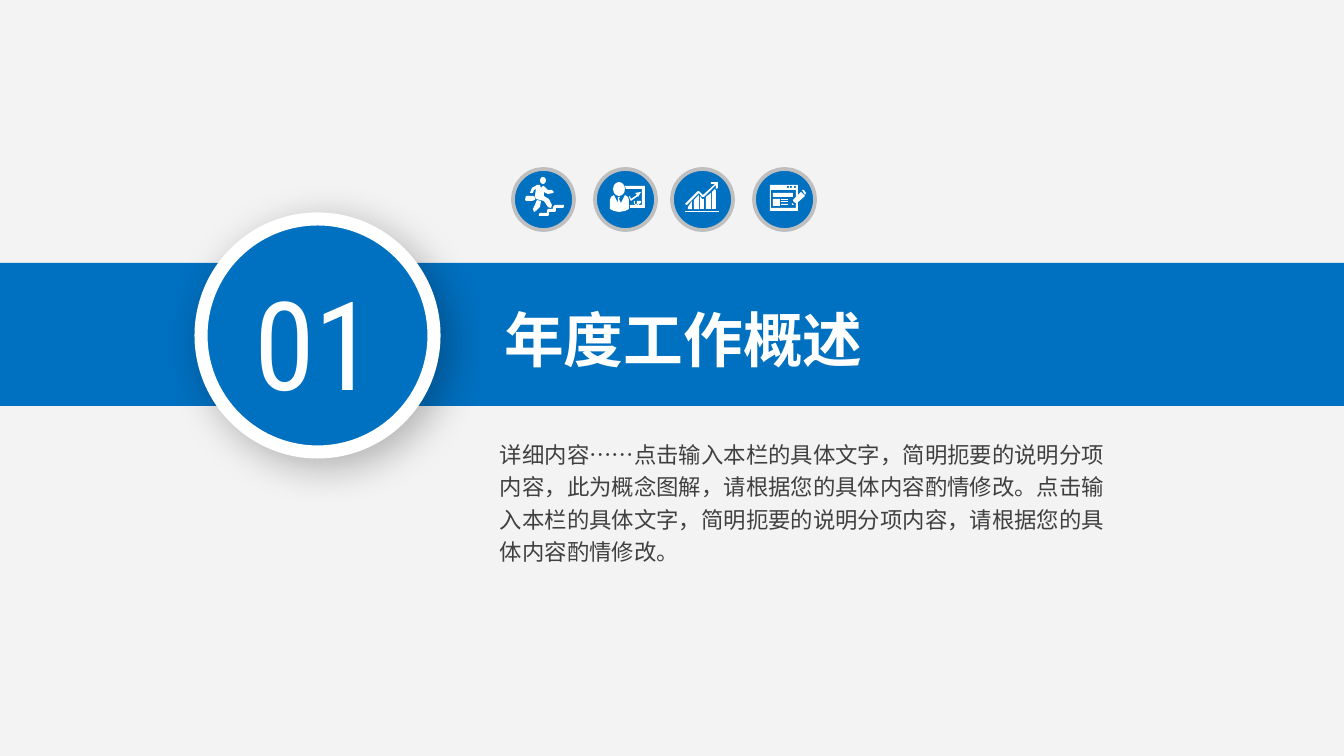
from lxml import etree
from pptx import Presentation
from pptx.dml.color import RGBColor
from pptx.enum.shapes import MSO_SHAPE
from pptx.enum.text import MSO_AUTO_SIZE, PP_ALIGN
from pptx.oxml.ns import qn
from pptx.util import Pt

OVAL, RECT = MSO_SHAPE.OVAL, MSO_SHAPE.RECTANGLE
FIT, CENTER = MSO_AUTO_SIZE.SHAPE_TO_FIT_TEXT, PP_ALIGN.CENTER
SCALE = 914400 / 134.4
COLORS = {"bg": "F3F3F3", "blue": "0070C0", "white": "FFFFFF",
          "ring": "BFBFBF", "body": "404040"}
CJK, LATIN = "Noto Sans CJK SC", "Roboto Condensed"
ICON_TOP, ICON_SIZE = 169, 61

# Icon parts lie in px from the top left of their disc:
# ovals and rects are boxes, outlines are lists of contours.
RUNNER = {
    "ovals": [(27, 8, 6, 7)],
    "outlines": [
        [[(27, 44), (34, 44), (34, 42), (35, 40), (40, 40), (40, 38), (42, 36),
          (51, 36), (51, 38), (50, 39), (43, 39), (43, 42), (42, 43), (36, 43),
          (36, 46), (35, 47), (26, 47), (26, 45)]],
        [[(13, 32), (19, 32), (22, 31), (22, 28), (20, 27), (13, 27), (12, 31)]],
        [[(20, 40), (24, 31), (28, 32), (27, 38), (23, 42), (21, 43)]],
        [[(30, 17), (31, 17), (35, 21), (39, 21), (41, 23), (40, 24), (35, 25),
          (31, 23), (31, 27), (36, 30), (39, 36), (38, 39), (35, 38), (31, 32),
          (23, 30), (22, 27), (23, 20), (21, 21), (20, 24), (17, 24), (19, 19),
          (24, 16), (27, 16), (28, 19)]],
    ],
}
PRESENTER = {
    "ovals": [(18, 13, 12, 14)],
    "outlines": [
        [[(30, 17), (31, 20), (47, 20), (47, 36), (35, 36), (35, 39), (50, 39),
          (50, 17)]],
        [[(35, 27), (34, 28), (36, 32), (43, 27), (43, 28), (46, 23), (40, 24),
          (42, 26), (36, 30)]],
        [[(30, 26), (26, 34), (24, 30), (25, 28), (23, 28), (23, 34), (19, 26),
          (16, 28), (15, 31), (15, 40), (19, 42), (24, 43), (30, 42), (34, 40),
          (34, 31), (33, 28)]],
        [[(39, 32), (39, 35), (41, 36), (43, 35), (43, 32), (42, 32), (42, 35),
          (40, 35), (40, 32)]],
        [[(43, 32), (43, 36), (44, 36), (44, 35), (46, 34), (46, 32)]],
    ],
}
GROWTH = {
    "rects": [(13, 42, 34, 1)],
    "outlines": [
        [[(16, 40), (20, 40), (20, 32), (16, 38)]],
        [[(22, 40), (27, 40), (27, 26), (22, 31)]],
        [[(28, 40), (32, 40), (32, 30), (30, 30), (28, 27)]],
        [[(34, 40), (39, 40), (39, 24), (34, 28)]],
        [[(40, 40), (44, 40), (44, 22), (43, 20), (40, 23)]],
        [[(15, 36), (27, 24), (30, 28), (32, 28), (44, 16), (44, 20), (46, 19),
          (46, 13), (39, 13), (39, 15), (43, 15), (31, 26), (27, 22), (26, 22),
          (13, 35)]],
    ],
}
BROWSER = {
    "rects": [(19, 24, 20, 4), (19, 30, 7, 7)]
             + [(27, y, 7, 1) for y in (30, 32, 35)],
    "outlines": [
        [[(16, 16), (44, 16), (44, 42), (16, 42)],
         [(17, 21), (17, 39), (42, 39), (42, 21)]]
        + [[(x, 17), (x, 19), (x + 2, 19), (x + 2, 17)] for x in (33, 36, 40)],
        [[(38, 34), (38, 36), (40, 36)]],
        [[(51, 26), (52, 24), (50, 21), (48, 21)]],
        [[(47, 23), (39, 31), (39, 32), (41, 34), (43, 34), (51, 27)]],
    ],
}
ICONS = [(513, RUNNER), (595, PRESENTER), (672, GROWTH), (754, BROWSER)]


def px(n):
    return round(n * SCALE)


def rgb(name):
    return RGBColor.from_string(COLORS[name])


def paint(sp, fill, line=None, width=0):
    sp.shadow.inherit = False
    sp.fill.solid()
    sp.fill.fore_color.rgb = rgb(fill)
    if line:
        sp.line.color.rgb = rgb(line)
        sp.line.width = Pt(width)
    else:
        sp.line.fill.background()


def add_preset(shapes, kind, box, fill, line=None, width=0):
    sp = shapes.add_shape(kind, *map(px, box))
    paint(sp, fill, line, width)
    return sp


def add_outline(shapes, contours, left, top):
    """Draw closed contours as one shape; inner contours become holes."""
    placed = [[(left + x, top + y) for x, y in c] for c in contours]
    builder = shapes.build_freeform(*placed[0][0], scale=SCALE)
    for i, points in enumerate(placed):
        if i:
            builder.move_to(*points[0])
        builder.add_line_segments(points[1:], close=True)
    paint(builder.convert_to_shape(), "white")


def add_icon(slide, left, icon):
    shapes = slide.shapes.add_group_shape().shapes
    add_preset(shapes, OVAL, (left, ICON_TOP, ICON_SIZE, ICON_SIZE),
               "blue", "ring", 2)
    for kind, key in ((OVAL, "ovals"), (RECT, "rects")):
        for x, y, w, h in icon.get(key, []):
            add_preset(shapes, kind, (left + x, ICON_TOP + y, w, h), "white")
    for contours in icon["outlines"]:
        add_outline(shapes, contours, left, ICON_TOP)


def add_shadow(sp):
    effects = sp._element.spPr.find(qn("a:effectLst"))
    shadow = etree.SubElement(
        effects, qn("a:outerShdw"), blurRad=str(Pt(22)), dist=str(Pt(6)),
        dir=str(45 * 60000), algn="tl", rotWithShape="0")
    color = etree.SubElement(shadow, qn("a:srgbClr"), val="000000")
    etree.SubElement(color, qn("a:alpha"), val="28000")


def add_text(shapes, box, text, font, color, para=None, inset=None):
    """font holds name, size and bold; para holds paragraph values."""
    tf = shapes.add_textbox(*map(px, box)).text_frame
    tf.word_wrap = True
    tf.auto_size = FIT
    if inset:
        tf.margin_left = tf.margin_right = px(inset[0])
        tf.margin_top = tf.margin_bottom = px(inset[1])
    p = tf.paragraphs[0]
    for key, value in (para or {}).items():
        setattr(p, key, value)
    r = p.add_run()
    r.text = text
    for key, value in font.items():
        setattr(r.font, key, value)
    r.font.color.rgb = rgb(color)
    etree.SubElement(r._r.get_or_add_rPr(), qn("a:ea"), typeface=font["name"])


def add_number_disc(slide, number):
    shapes = slide.shapes.add_group_shape().shapes
    add_shadow(add_preset(shapes, OVAL, (201, 219, 233, 233),
                          "blue", "white", 7))
    add_text(shapes, (227, 262, 176, 160), number,
             {"name": LATIN, "size": Pt(66)}, "white",
             {"alignment": CENTER}, (9, 5))


def main():
    prs = Presentation()
    prs.slide_width, prs.slide_height = px(1344), px(756)
    slide = prs.slides.add_slide(prs.slide_layouts[6])
    slide.background.fill.solid()
    slide.background.fill.fore_color.rgb = rgb("bg")

    add_preset(slide.shapes, RECT, (0, 263, 1344, 143), "blue")
    add_text(slide.shapes, (491, 296, 476, 86), "年度工作概述",
             {"name": CJK, "size": Pt(32), "bold": True}, "white")
    add_text(slide.shapes, (491, 431, 626, 141),
             "详细内容……点击输入本栏的具体文字，简明扼要的说明分项内容，"
             "此为概念图解，请根据您的具体内容酌情修改。点击输入本栏的具体文字，"
             "简明扼要的说明分项内容，请根据您的具体内容酌情修改。",
             {"name": CJK, "size": Pt(12)}, "body",
             {"line_spacing": 1.2}, (9, 5))
    for left, icon in ICONS:
        add_icon(slide, left, icon)
    add_number_disc(slide, "01")
    prs.save("out.pptx")


if __name__ == "__main__":
    main()
